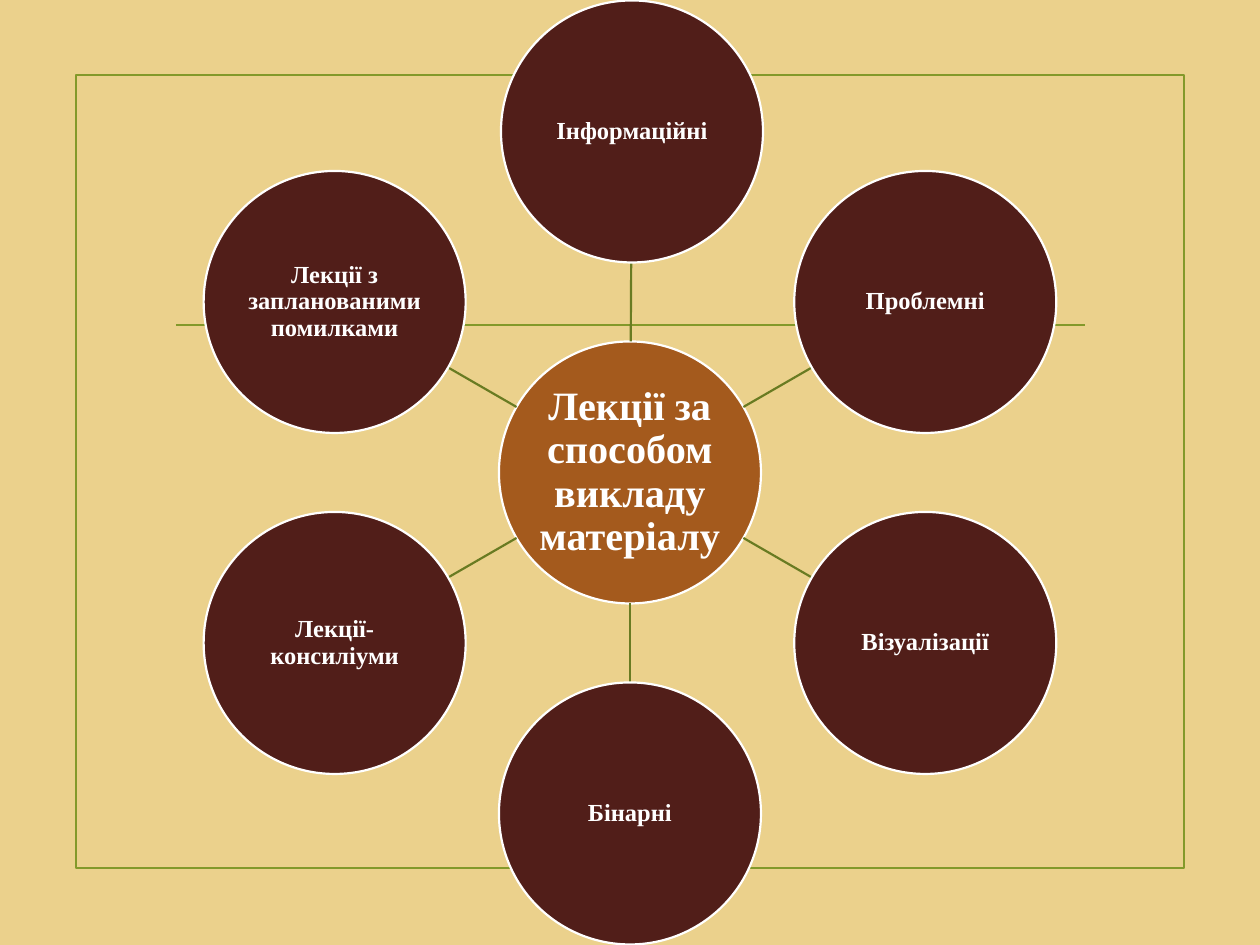
from math import cos, hypot, radians, sin

from lxml.etree import SubElement
from pptx import Presentation
from pptx.dml.color import RGBColor
from pptx.enum.shapes import MSO_CONNECTOR, MSO_SHAPE
from pptx.enum.text import MSO_ANCHOR, PP_ALIGN
from pptx.oxml.ns import qn
from pptx.util import Emu, Pt

SAND = RGBColor(0xEB, 0xD1, 0x8C)
GREEN = RGBColor(0x83, 0x99, 0x2A)
MOSS = RGBColor(0x69, 0x7B, 0x22)
RUST = RGBColor(0xA4, 0x5A, 0x1D)
WINE = RGBColor(0x51, 0x1E, 0x19)
WHITE = RGBColor(0xFF, 0xFF, 0xFF)

FONT = "Times New Roman"
WIDTH = Pt(1.25)
SIZE = 262  # circle diameter
RING = 341  # distance from hub to topic centres

HUB = "Лекції за способом викладу матеріалу"
# Topics clockwise from the top, each with its sideways shift
TOPICS = [
    ("Інформаційні", 2),
    ("Проблемні", 0),
    ("Візуалізації", 0),
    ("Бінарні", 0),
    ("Лекції-консиліуми", 0),
    ("Лекції з запланованими помилками", 0),
]


def px(n):
    return Emu(round(n * 914400 / 126))


def add_line(slide, start, end, color):
    line = slide.shapes.add_connector(
        MSO_CONNECTOR.STRAIGHT, *map(px, (*start, *end)))
    line.line.color.rgb = color
    line.line.width = WIDTH
    SubElement(line._element.spPr, qn("a:effectLst"))


def add_shape(slide, kind, box, color):
    shape = slide.shapes.add_shape(kind, *map(px, box))
    shape.shadow.inherit = False
    shape.line.color.rgb = color
    shape.line.width = WIDTH
    return shape


def add_disc(slide, center, text, fill, size):
    x, y = center
    box = (x - SIZE / 2, y - SIZE / 2, SIZE, SIZE)
    disc = add_shape(slide, MSO_SHAPE.OVAL, box, WHITE)
    disc.fill.solid()
    disc.fill.fore_color.rgb = fill
    frame = disc.text_frame
    frame.word_wrap = True
    frame.vertical_anchor = MSO_ANCHOR.MIDDLE
    frame.margin_left = frame.margin_right = px(1)
    frame.margin_top = frame.margin_bottom = px(1)
    para = frame.paragraphs[0]
    para.text = text
    para.alignment = PP_ALIGN.CENTER
    para.line_spacing = 0.9
    font = para.font
    font.name, font.size, font.bold = FONT, Pt(size), True
    font.color.rgb = WHITE


def add_spoke(slide, hub, node):
    """Join the rims of two discs along the line of their centres."""
    dx, dy = node[0] - hub[0], node[1] - hub[1]
    part = SIZE / 2 / hypot(dx, dy)
    start = (hub[0] + dx * part, hub[1] + dy * part)
    end = (node[0] - dx * part, node[1] - dy * part)
    add_line(slide, start, end, MOSS)


def draw_back(slide, box):
    """Frame with a title rule inside it."""
    x, y, w, h = box
    slide.background.fill.solid()
    slide.background.fill.fore_color.rgb = SAND
    frame = add_shape(slide, MSO_SHAPE.RECTANGLE, box, GREEN)
    frame.fill.background()
    add_line(slide, (x + 100, y + 250), (x + w - 99, y + 250), GREEN)


def draw_wheel(slide, box):
    """Hub with topics spread evenly around it."""
    x, y, w, h = box
    hub = (x + w / 2, y + h / 2)
    add_disc(slide, hub, HUB, RUST, 23)
    for i, (text, shift) in enumerate(TOPICS):
        angle = radians(360 / len(TOPICS) * i - 90)
        node = (hub[0] + RING * cos(angle) + shift,
                hub[1] + RING * sin(angle))
        add_spoke(slide, hub, node)
        add_disc(slide, node, text, WINE, 14)


def main():
    deck = Presentation()
    deck.slide_width, deck.slide_height = px(1260), px(945)
    slide = deck.slides.add_slide(deck.slide_layouts[6])
    draw_back(slide, (76, 75, 1108, 793))
    draw_wheel(slide, (0, 0, 1260, 945))
    deck.save("out.pptx")


if __name__ == "__main__":
    main()
